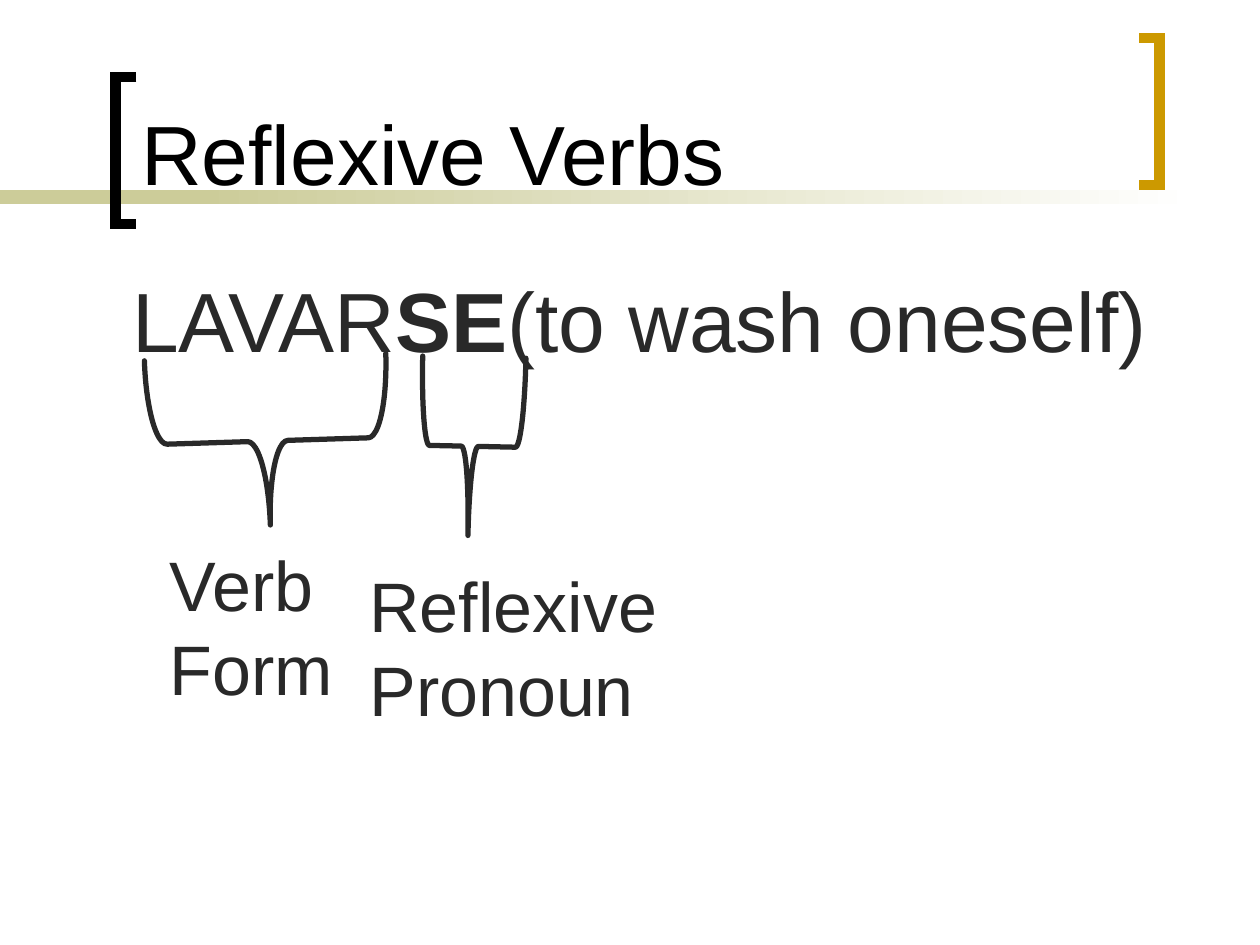
from dataclasses import dataclass

from lxml import etree
from pptx import Presentation
from pptx.dml.color import RGBColor
from pptx.enum.shapes import MSO_SHAPE
from pptx.enum.text import MSO_ANCHOR, MSO_AUTO_SIZE, PP_ALIGN
from pptx.oxml.ns import qn
from pptx.util import Pt

RECTANGLE = MSO_SHAPE.RECTANGLE
LEFT_BRACE = MSO_SHAPE.LEFT_BRACE
TOP, BOTTOM = MSO_ANCHOR.TOP, MSO_ANCHOR.BOTTOM
LEFT = PP_ALIGN.LEFT
NO_FIT = MSO_AUTO_SIZE.NONE


@dataclass(frozen=True)
class Theme:
    font: str = "Arial"
    black: str = "000000"
    ink: str = "292929"
    gold: str = "CC9900"
    olive: str = "CCCC99"
    white: str = "FFFFFF"
    large: int = 48
    medium: int = 40
    bracket_line: int = 6
    brace_line: int = 3


THEME = Theme()

TITLE = ([[("Reflexive Verbs", False)]], (73.5, 8, 564, 111.5))
TEXTS = [
    ([[("LAVAR", False), ("SE", True), ("(to wash oneself)", False)]],
     (68.5, 150, 615.5, 324), THEME.large),
    ([[("Verb", False)], [("Form", False)]],
     (90, 306, 108, 103), THEME.medium),
    ([[("Reflexive", False)], [("Pronoun", False)]],
     (204, 318, 179, 103), THEME.medium),
]
BRACES = [
    ((105, 183, 96, 138), 268.2, (0.12, 0.5)),
    ((219, 225.5, 102, 59), 271.2, (0.083, 0.474)),
]
BARS = [
    ((0, 108.75, 168, 8), (THEME.olive, THEME.olive)),
    ((114, 108.75, 570, 8), (THEME.olive, THEME.white)),
]
BRACKET_HEIGHT = 84
BRACKETS = [
    (66, 78, 44, THEME.black),
    (662.5, 651, 21.75, THEME.gold),
]


def color(code):
    return RGBColor.from_string(code)


def points(lengths):
    return [Pt(length) for length in lengths]


def outline(shape, code, width, join, cap):
    shape.shadow.inherit = False
    shape.fill.background()
    shape.line.color.rgb = color(code)
    shape.line.width = Pt(width)
    line = shape.element.spPr.find(qn("a:ln"))
    line.set("cap", cap)
    etree.SubElement(line, qn(f"a:{join}"))


def write(box, paragraphs, size, code, anchor):
    frame = box.text_frame
    frame.word_wrap = True
    frame.auto_size = NO_FIT
    frame.vertical_anchor = anchor
    for index, spans in enumerate(paragraphs):
        para = frame.add_paragraph() if index else frame.paragraphs[0]
        para.alignment = LEFT
        for text, bold in spans:
            span = para.add_run()
            span.text = text
            span.font.name = THEME.font
            span.font.size = Pt(size)
            span.font.bold = bold
            span.font.color.rgb = color(code)


def add_bar(page, place, colors):
    bar = page.shapes.add_shape(RECTANGLE, *points(place))
    bar.shadow.inherit = False
    bar.line.fill.background()
    bar.fill.gradient()
    bar.fill.gradient_angle = 0
    for stop, code in zip(bar.fill.gradient_stops, colors):
        stop.color.rgb = color(code)


def add_bracket(page, spine, tip, top, code):
    bottom = top + BRACKET_HEIGHT
    builder = page.shapes.build_freeform(Pt(tip), Pt(top))
    corners = [(spine, top), (spine, bottom), (tip, bottom)]
    builder.add_line_segments([points(corner) for corner in corners], close=False)
    outline(builder.convert_to_shape(), code, THEME.bracket_line, "miter", "flat")


def add_brace(page, place, rotation, bends):
    brace = page.shapes.add_shape(LEFT_BRACE, *points(place))
    brace.rotation = rotation
    for index, bend in enumerate(bends):
        brace.adjustments[index] = bend
    outline(brace, THEME.ink, THEME.brace_line, "round", "rnd")


def main():
    deck = Presentation()
    deck.slide_width, deck.slide_height = Pt(720), Pt(540)
    page = deck.slides.add_slide(deck.slide_layouts[5])

    for bar in BARS:
        add_bar(page, *bar)
    for bracket in BRACKETS:
        add_bracket(page, *bracket)

    title = page.shapes.title
    paragraphs, place = TITLE
    title.left, title.top, title.width, title.height = points(place)
    write(title, paragraphs, THEME.large, THEME.black, BOTTOM)
    title.element.getparent().append(title.element)

    for paragraphs, place, size in TEXTS:
        box = page.shapes.add_textbox(*points(place))
        write(box, paragraphs, size, THEME.ink, TOP)
    for brace in BRACES:
        add_brace(page, *brace)

    deck.save("out.pptx")


if __name__ == "__main__":
    main()
